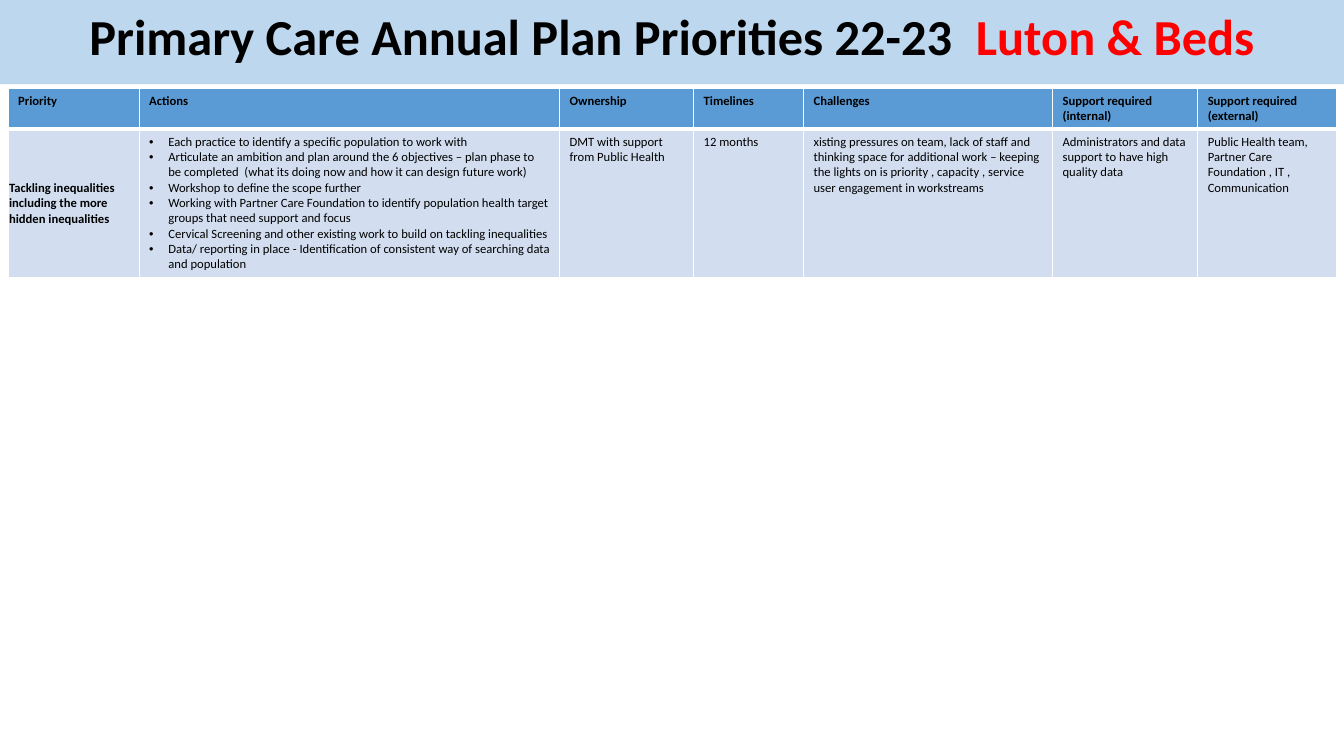
"""Build the Primary Care annual plan priorities slide."""
import pptx
import pptx.dml.color
import pptx.enum.text
import pptx.oxml
import pptx.oxml.ns
import pptx.util

RGBColor = pptx.dml.color.RGBColor
BLACK = RGBColor(0x00, 0x00, 0x00)
WHITE = RGBColor(0xFF, 0xFF, 0xFF)
RED = RGBColor(0xFF, 0x00, 0x00)
BANNER = RGBColor(0xBD, 0xD7, 0xEE)
HEADER = RGBColor(0x5B, 0x9B, 0xD5)
BODY = RGBColor(0xD2, 0xDE, 0xEF)

FONT = "Calibri"
EMU_PER_PX = 9144
COL_WIDTHS = [130, 417, 133, 109, 247, 144, 138]
ROW_HEIGHTS = [40, 147]
HEADINGS = ["Priority", "Actions", "Ownership", "Timelines", "Challenges",
            "Support required (internal)", "Support required (external)"]
ACTIONS = [
    "Each practice to identify a specific population to work with",
    "Articulate an ambition and plan around the 6 objectives – plan phase to be "
    "completed  (what its doing now and how it can design future work)",
    "Workshop to define the scope further",
    "Working with Partner Care Foundation to identify population health target "
    "groups that need support and focus",
    "Cervical Screening and other existing work to build on tackling inequalities",
    "Data/ reporting in place - Identification of consistent way of searching data "
    "and population",
]
PLAN = [
    ["Tackling inequalities including the more hidden inequalities"],
    ACTIONS,
    ["DMT with support from Public Health"],
    ["12 months"],
    ["xisting pressures on team, lack of staff and thinking space for additional "
     "work – keeping the lights on is priority , capacity , service user engagement "
     "in workstreams"],
    ["Administrators and data support to have high quality data"],
    ["Public Health team, Partner Care Foundation , IT , Communication"],
]


def px(n):
    """Turn pixels into EMU."""
    return pptx.util.Emu(n * EMU_PER_PX)


def add_run(p, text, size, color=BLACK, bold=False):
    """Add one formatted run to a paragraph."""
    r = p.add_run()
    r.text = text
    r.font.name = FONT
    r.font.size = pptx.util.Pt(size)
    r.font.bold = bold
    r.font.color.rgb = color


def add_bullet(p, indent):
    """Give a paragraph a hanging bullet."""
    pPr = p._p.get_or_add_pPr()
    pPr.set("marL", str(px(indent)))
    pPr.set("indent", str(-px(indent)))
    ns = pptx.oxml.ns.nsdecls("a")
    pPr.append(pptx.oxml.parse_xml(f'<a:buFont {ns} typeface="Arial"/>'))
    pPr.append(pptx.oxml.parse_xml(f'<a:buChar {ns} char="•"/>'))


def set_borders(cell, bottom):
    """Draw white cell borders with the given bottom width in points."""
    tcPr = cell._tc.get_or_add_tcPr()
    ns = pptx.oxml.ns.nsdecls("a")
    for i, (side, width) in enumerate([("L", 1), ("R", 1), ("T", 1), ("B", bottom)]):
        tcPr.insert(i, pptx.oxml.parse_xml(
            f'<a:ln{side} {ns} w="{pptx.util.Pt(width)}"><a:solidFill>'
            f'<a:srgbClr val="{WHITE}"/></a:solidFill></a:ln{side}>'))


def fill_cell(cell, lines, color, bold=False, bottom=1):
    """Write a cell's paragraphs, with bullets when there are several."""
    cell.fill.solid()
    cell.fill.fore_color.rgb = color
    set_borders(cell, bottom)
    tf = cell.text_frame
    for i, line in enumerate(lines):
        p = tf.add_paragraph() if i else tf.paragraphs[0]
        if len(lines) > 1:
            add_bullet(p, 19)
        add_run(p, line, 9, bold=bold)


def add_title(s):
    """Place the title as a full-width banner."""
    sp = s.shapes.title
    sp.left, sp.top, sp.width, sp.height = px(0), px(0), px(1333), px(71)
    sp.fill.solid()
    sp.fill.fore_color.rgb = BANNER
    tf = sp.text_frame
    tf.word_wrap = True
    tf.auto_size = pptx.enum.text.MSO_AUTO_SIZE.SHAPE_TO_FIT_TEXT
    tf.vertical_anchor = pptx.enum.text.MSO_ANCHOR.TOP
    p = tf.paragraphs[0]
    p.alignment = pptx.enum.text.PP_ALIGN.CENTER
    add_run(p, "Primary Care Annual Plan Priorities 22-23  ", 36, bold=True)
    add_run(p, "Luton & Beds", 36, RED, bold=True)


def add_plan_table(s):
    """Add the table of priorities."""
    table = s.shapes.add_table(2, len(COL_WIDTHS), px(8), px(88),
                               px(sum(COL_WIDTHS)), px(sum(ROW_HEIGHTS))).table
    for row, height in zip(table.rows, ROW_HEIGHTS):
        row.height = px(height)
    for i, width in enumerate(COL_WIDTHS):
        table.columns[i].width = px(width)
        fill_cell(table.cell(0, i), [HEADINGS[i]], HEADER, bold=True, bottom=3)
        fill_cell(table.cell(1, i), PLAN[i], BODY, bold=i == 0)
    priority = table.cell(1, 0)
    priority.vertical_anchor = pptx.enum.text.MSO_ANCHOR.MIDDLE
    priority.margin_left = priority.margin_right = priority.margin_top = px(1)
    priority.margin_bottom = px(0)


def main():
    """Build and save the slide."""
    prs = pptx.Presentation()
    prs.slide_width, prs.slide_height = px(1333), px(750)
    s = prs.slides.add_slide(prs.slide_layouts[5])
    add_plan_table(s)
    add_title(s)
    prs.save("out.pptx")


if __name__ == "__main__":
    main()
